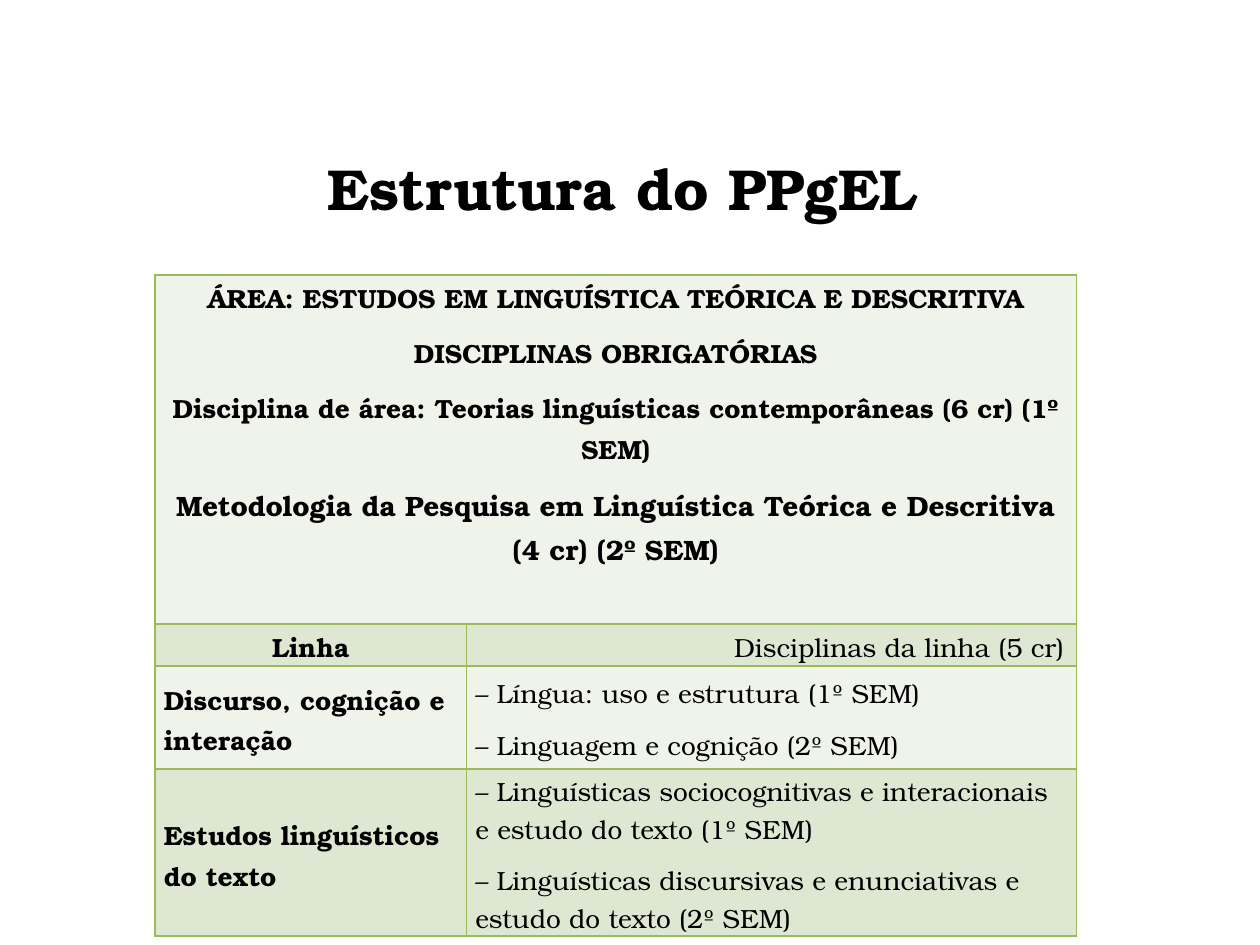
from lxml.etree import SubElement
from pptx import Presentation
from pptx.dml.color import RGBColor
from pptx.enum.text import MSO_ANCHOR, PP_ALIGN
from pptx.oxml.ns import qn
from pptx.util import Pt

BLACK = RGBColor(0x00, 0x00, 0x00)
GREEN = RGBColor(0x9B, 0xBB, 0x59)
BANDS = (RGBColor(0xEF, 0xF3, 0xEA), RGBColor(0xDE, 0xE7, 0xD1))
FONT = "TeX Gyre Bonum"
BODY_SIZE = 15

TITLE = "Estrutura do PPgEL"
AREA = [
    "ÁREA: ESTUDOS EM LINGUÍSTICA TEÓRICA E DESCRITIVA",
    "DISCIPLINAS OBRIGATÓRIAS",
    "Disciplina de área: Teorias linguísticas contemporâneas (6 cr) (1º SEM)",
    "Metodologia da Pesquisa em Linguística Teórica e Descritiva (4 cr) (2º SEM)",
]
LINES = [
    ("Discurso, cognição e interação", [
        "– Língua: uso e estrutura (1º SEM)",
        "– Linguagem e cognição (2º SEM)",
    ]),
    ("Estudos linguísticos do texto", [
        "– Linguísticas sociocognitivas e interacionais e estudo do texto (1º SEM)",
        "– Linguísticas discursivas e enunciativas e estudo do texto (2º SEM)",
    ]),
]
COLUMN_WIDTHS = (178, 348.5)
ROW_HEIGHTS = (199.5, 24, 59, 95.5)


class Painter:
    def __init__(self, page):
        self.page = page

    def style(self, para, size, bold, align):
        para.alignment = align
        font = para.font
        font.name, font.size, font.bold = FONT, Pt(size), bold
        font.color.rgb = BLACK

    def title(self, text, left, top, width, height):
        box = self.page.shapes.add_textbox(Pt(left), Pt(top), Pt(width), Pt(height))
        frame = box.text_frame
        frame.word_wrap = True
        frame.vertical_anchor = MSO_ANCHOR.MIDDLE
        frame.text = text
        self.style(frame.paragraphs[0], 33, True, PP_ALIGN.CENTER)

    def table(self, left, top, widths, heights):
        table = self.page.shapes.add_table(
            len(heights), len(widths), Pt(left), Pt(top),
            Pt(sum(widths)), Pt(sum(heights))).table
        for column, width in zip(table.columns, widths):
            column.width = Pt(width)
        for index, (row, height) in enumerate(zip(table.rows, heights)):
            row.height = Pt(height)
            for cell in row.cells:
                self.frame_cell(cell, BANDS[index % 2])
        return table

    def frame_cell(self, cell, color):
        properties = cell._tc.get_or_add_tcPr()
        for side in ("a:lnL", "a:lnR", "a:lnT", "a:lnB"):
            line = SubElement(properties, qn(side), w=str(Pt(1)))
            fill = SubElement(line, qn("a:solidFill"))
            SubElement(fill, qn("a:srgbClr"), val=str(GREEN))
        cell.fill.solid()
        cell.fill.fore_color.rgb = color
        cell.margin_left = cell.margin_right = Pt(5)
        cell.margin_top, cell.margin_bottom = Pt(0.7), Pt(0)
        cell.vertical_anchor = MSO_ANCHOR.MIDDLE

    def cell_text(self, cell, texts, bold=False, align=PP_ALIGN.LEFT):
        cell.text = "\n".join(texts)
        for para in cell.text_frame.paragraphs:
            self.style(para, BODY_SIZE, bold, align)
            para.line_spacing = 1.07
            para.space_after = Pt(8)


def main():
    deck = Presentation()
    deck.slide_width, deck.slide_height = Pt(720), Pt(540)
    page = deck.slides.add_slide(deck.slide_layouts[6])
    painter = Painter(page)
    painter.title(TITLE, 67.7, 80.6, 576, 53.3)

    table = painter.table(88.6, 157, COLUMN_WIDTHS, ROW_HEIGHTS)
    area = table.cell(0, 0)
    area.merge(table.cell(0, 1))
    painter.cell_text(area, AREA, True, PP_ALIGN.CENTER)
    area.vertical_anchor = MSO_ANCHOR.TOP
    area.text_frame.paragraphs[-1].font.size = Pt(16)

    painter.cell_text(table.cell(1, 0), ["Linha"], True, PP_ALIGN.CENTER)
    heading = table.cell(1, 1)
    painter.cell_text(heading, ["Disciplinas da linha (5 cr)"], align=PP_ALIGN.RIGHT)
    heading.margin_right = Pt(7)
    for row, (name, courses) in enumerate(LINES, start=2):
        painter.cell_text(table.cell(row, 0), [name], True)
        painter.cell_text(table.cell(row, 1), courses)

    deck.save("out.pptx")


if __name__ == "__main__":
    main()
